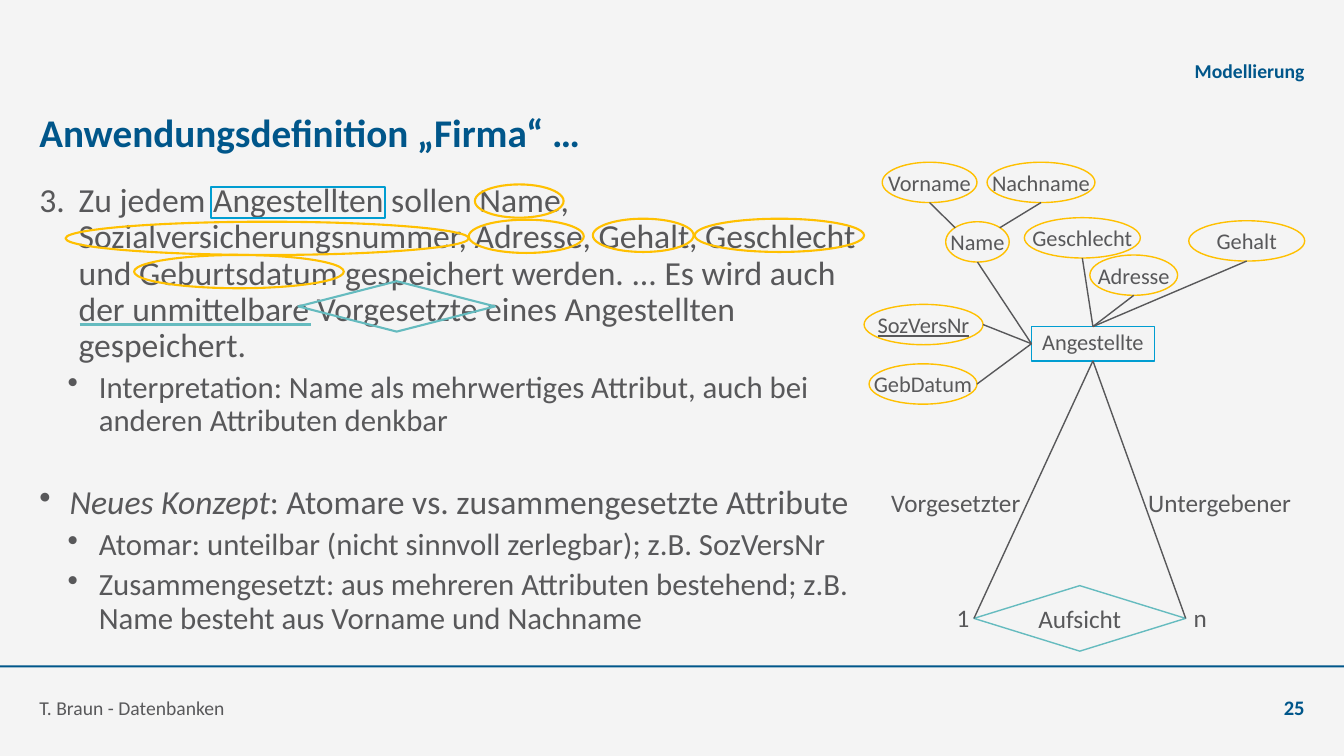
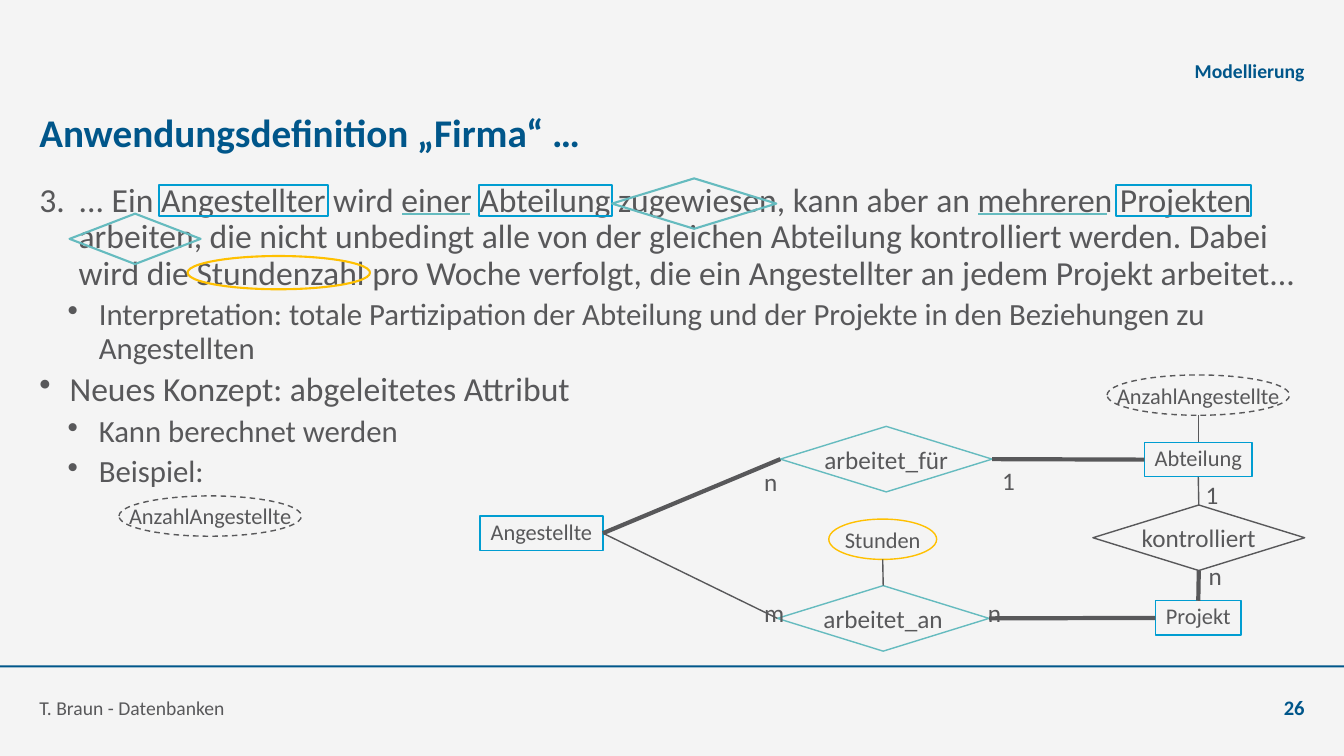
from typing import NamedTuple

from lxml import etree
from pptx import Presentation
from pptx.dml.color import RGBColor
from pptx.enum import dml, shapes, text
from pptx.oxml import ns
from pptx.util import Inches, Pt

PAPER = RGBColor(0xF4, 0xF4, 0xF4)
NAVY = RGBColor(0x00, 0x56, 0x8A)
GREY = RGBColor(0x58, 0x58, 0x5A)
BLUE = RGBColor(0x00, 0x9D, 0xD1)
GOLD = RGBColor(0xFF, 0xC0, 0x00)
TEAL = RGBColor(0x65, 0xBB, 0xBF)
FONT = "Calibri"
LEFT, CONTENT_WIDTH = 0.39, 12.55
RECT = shapes.MSO_SHAPE.RECTANGLE
OVAL = shapes.MSO_SHAPE.OVAL
DIAMOND = shapes.MSO_SHAPE.DIAMOND
ENTITY_HEIGHT, ATTRIBUTE_HEIGHT, MARK_HEIGHT = 0.34, 0.4, 0.33
RELATION_SIZE = (2.1, 0.65)
SIDES = {
    "top": (0.5, 0), "left": (0, 0.5), "bottom": (0.5, 1), "right": (1, 0.5),
    "upper left": (0.15, 0.15), "upper right": (0.85, 0.15),
}


class Level(NamedTuple):
    depth: int
    indent: float
    hanging: float
    size: int
    bullet: str
    bullet_values: dict


NUMBERED = Level(0, 0.39, 0.39, 24, "a:buAutoNum", {"type": "arabicPeriod", "startAt": "3"})
MAIN = Level(0, 0.3, 0.3, 24, "a:buChar", {"char": "•"})
SUB = Level(1, 0.59, 0.31, 22, "a:buChar", {"char": "•"})


class Item(NamedTuple):
    level: Level
    text: str
    italic_lead: str = ""
    gap: int = 5


def style(font, size, color=GREY, bold=None):
    font.name, font.size, font.bold = FONT, Pt(size), bold
    font.color.rgb = color


def add_box(page, left, top, width, height):
    box = page.shapes.add_textbox(Inches(left), Inches(top), Inches(width), Inches(height))
    frame = box.text_frame
    frame.word_wrap = True
    frame.margin_left = frame.margin_right = frame.margin_top = frame.margin_bottom = 0
    return frame


def add_line_of_text(page, place, content, size, color, bold=None, right=False, middle=False):
    frame = add_box(page, *place)
    frame.text = content
    frame.vertical_anchor = text.MSO_ANCHOR.MIDDLE if middle else text.MSO_ANCHOR.BOTTOM
    para = frame.paragraphs[0]
    para.alignment = text.PP_ALIGN.RIGHT if right else text.PP_ALIGN.LEFT
    style(para.runs[0].font, size, color, bold)


def add_page(deck, number):
    page = deck.slides.add_slide(deck.slide_layouts[6])
    page.background.fill.solid()
    page.background.fill.fore_color.rgb = PAPER
    rule = add_shape(page, RECT, (0, 6.6, 13.33, 0.02), None, fill=NAVY)
    rule.line.fill.background()
    add_line_of_text(page, (LEFT, 0.99, CONTENT_WIDTH, 0.63), "Anwendungsdefinition „Firma“ …",
                     28, NAVY, bold=True, middle=True)
    add_line_of_text(page, (3.93, 0.43, 9.01, 0.39), "Modellierung", 14, NAVY, bold=True, right=True)
    add_line_of_text(page, (LEFT, 6.75, 9.2, 0.39), "T. Braun - Datenbanken", 14, GREY)
    add_line_of_text(page, (12.15, 6.75, 0.79, 0.39), str(number), 14.7, NAVY, bold=True, right=True)
    return page


def add_body(page, width, items):
    frame = add_box(page, LEFT, 1.82, width, 4.64)
    for index, item in enumerate(items):
        para = frame.add_paragraph() if index else frame.paragraphs[0]
        level = item.level
        para.level = level.depth
        props = para._p.get_or_add_pPr()
        props.set("marL", str(Inches(level.indent)))
        props.set("indent", str(-Inches(level.hanging)))
        etree.SubElement(props, ns.qn(level.bullet), level.bullet_values)
        para.line_spacing = 0.9
        para.space_before = Pt(item.gap if index else 0)
        for content, italic in ((item.italic_lead, True), (item.text, None)):
            if content:
                span = para.add_run()
                span.text = content
                style(span.font, level.size)
                span.font.italic = italic


def add_shape(page, kind, place, color, weight=1, fill=None):
    shape = page.shapes.add_shape(kind, *map(Inches, place))
    shape.shadow.inherit = False
    if fill is None:
        shape.fill.background()
    else:
        shape.fill.solid()
        shape.fill.fore_color.rgb = fill
    if color is not None:
        shape.line.color.rgb = color
        shape.line.width = Pt(weight)
    return shape


def add_node(page, kind, place, label, color, size=16):
    node = add_shape(page, kind, place, color, fill=PAPER)
    frame = node.text_frame
    frame.text = label
    frame.word_wrap = False
    frame.vertical_anchor = text.MSO_ANCHOR.MIDDLE
    para = frame.paragraphs[0]
    para.alignment = text.PP_ALIGN.CENTER
    style(para.runs[0].font, size)
    return node


def add_entity(page, left, top, width, label):
    node = add_node(page, RECT, (left, top, width, ENTITY_HEIGHT), label, BLUE)
    node.text_frame.vertical_anchor = text.MSO_ANCHOR.TOP
    node.text_frame.paragraphs[0].line_spacing = 0.9
    return node


def add_attribute(page, left, top, width, label, key=False, derived=False):
    color = GREY if derived else GOLD
    node = add_node(page, OVAL, (left, top, width, ATTRIBUTE_HEIGHT), label, color)
    if key:
        node.text_frame.paragraphs[0].runs[0].font.underline = True
    if derived:
        node.line.dash_style = dml.MSO_LINE.DASH
    return node


def add_relation(page, left, top, label, color=TEAL):
    return add_node(page, DIAMOND, (left, top, *RELATION_SIZE), label, color, 18)


def add_line(page, start, end, color=GREY, weight=1):
    line = page.shapes.add_connector(shapes.MSO_CONNECTOR.STRAIGHT, *start, *end)
    line.line.color.rgb = color
    line.line.width = Pt(weight)
    etree.SubElement(line._element.spPr, ns.qn("a:effectLst"))


def anchor(node, side):
    across, down = SIDES[side]
    return int(node.left + across * node.width), int(node.top + down * node.height)


def link(page, first, first_side, second, second_side, weight=1):
    add_line(page, anchor(first, first_side), anchor(second, second_side), weight=weight)


def add_label(page, left, top, width, label):
    box = page.shapes.add_textbox(Inches(left), Inches(top), Inches(width), Inches(0.4))
    frame = box.text_frame
    frame.text = label
    frame.word_wrap = False
    frame.auto_size = text.MSO_AUTO_SIZE.SHAPE_TO_FIT_TEXT
    style(frame.paragraphs[0].runs[0].font, 18)


def mark_words(page, kind, color, height, places):
    for left, top, width in places:
        add_shape(page, kind, (left, top, width, height), color, 1.5)


def underline_words(page, height, spans):
    for start, end in spans:
        add_line(page, (Inches(start), Inches(height)), (Inches(end), Inches(height)), TEAL, 1.5)


def build_attributes_page(deck):
    page = add_page(deck, 25)
    add_body(page, 8.26, [
        Item(NUMBERED, "Zu jedem Angestellten sollen Name, Sozialversicherungsnummer, Adresse, Gehalt, "
             "Geschlecht und Geburtsdatum gespeichert werden. ... Es wird auch der unmittelbare "
             "Vorgesetzte eines Angestellten gespeichert."),
        Item(SUB, "Interpretation: Name als mehrwertiges Attribut, auch bei anderen Attributen denkbar"),
        Item(MAIN, ": Atomare vs. zusammengesetzte Attribute", "Neues Konzept", 34),
        Item(SUB, "Atomar: unteilbar (nicht sinnvoll zerlegbar); z.B. SozVersNr"),
        Item(SUB, "Zusammengesetzt: aus mehreren Attributen bestehend; z.B. Name besteht aus "
             "Vorname und Nachname"),
    ])
    mark_words(page, RECT, BLUE, 0.3, [(2.09, 1.86, 1.73)])
    mark_words(page, OVAL, GOLD, MARK_HEIGHT, [
        (4.71, 1.83, 0.88), (0.65, 2.2, 4), (4.65, 2.18, 1.14),
        (5.88, 2.17, 1), (6.89, 2.17, 1.68), (1.33, 2.53, 2.08),
    ])
    employee = add_entity(page, 10.23, 3.24, 1.22, "Angestellte")
    name = None
    for left, top, width, label, side, employee_side in (
        (8.57, 3.02, 1.18, "SozVersNr", "right", "left"),
        (8.62, 3.61, 1.07, "GebDatum", "right", "left"),
        (10.16, 2.16, 1.15, "Geschlecht", "bottom", "top"),
        (10.81, 2.53, 0.87, "Adresse", "bottom", "top"),
        (11.79, 2.19, 1.15, "Gehalt", "bottom", "top"),
        (9.38, 2.2, 0.63, "Name", "bottom", "left"),
    ):
        name = add_attribute(page, left, top, width, label, key=label == "SozVersNr")
        link(page, employee, employee_side, name, side)
    first_name = add_attribute(page, 8.75, 1.61, 0.94, "Vorname")
    last_name = add_attribute(page, 9.79, 1.61, 1.07, "Nachname")
    link(page, name, "upper left", first_name, "bottom")
    link(page, name, "upper right", last_name, "bottom")
    supervision = add_relation(page, 9.66, 5.81, "Aufsicht")
    for side in ("right", "left"):
        link(page, supervision, side, employee, "bottom")
    for label in ((8.74, 4.79, 1.5, "Vorgesetzter"), (11.29, 4.79, 1.64, "Untergebener"),
                  (9.39, 5.93, 0.33, "1"), (11.74, 5.93, 0.34, "n")):
        add_label(page, *label)
    mark_words(page, DIAMOND, TEAL, 0.5, [(2.96, 2.79, 1.95)])
    underline_words(page, 3.22, [(0.79, 3.08)])


def build_relations_page(deck):
    page = add_page(deck, 26)
    add_body(page, CONTENT_WIDTH, [
        Item(NUMBERED, "... Ein Angestellter wird einer Abteilung zugewiesen, kann aber an mehreren "
             "Projekten arbeiten, die nicht unbedingt alle von der gleichen Abteilung kontrolliert "
             "werden. Dabei wird die Stundenzahl pro Woche verfolgt, die ein Angestellter an jedem "
             "Projekt arbeitet..."),
        Item(SUB, "Interpretation: totale Partizipation der Abteilung und der Projekte in den "
             "Beziehungen zu Angestellten"),
        Item(MAIN, "Neues Konzept: abgeleitetes Attribut"),
        Item(SUB, "Kann berechnet werden"),
        Item(SUB, "Beispiel:"),
    ])
    mark_words(page, RECT, BLUE, 0.3, [(1.58, 1.84, 1.67), (4.75, 1.84, 1.32), (11.07, 1.84, 1.34)])
    mark_words(page, OVAL, GOLD, MARK_HEIGHT, [(1.86, 2.54, 1.81)])
    department = add_entity(page, 11.35, 4.39, 1.07, "Abteilung")
    employee = add_entity(page, 4.76, 5.12, 1.22, "Angestellte")
    project = add_entity(page, 11.46, 5.96, 0.85, "Projekt")
    head_count = add_attribute(page, 10.98, 3.72, 1.81, "AnzahlAngestellte", derived=True)
    add_attribute(page, 1.18, 4.92, 1.81, "AnzahlAngestellte", derived=True)
    hours = add_attribute(page, 8.22, 5.15, 1.07, "Stunden")
    works_for = add_relation(page, 7.74, 4.23, "arbeitet_für")
    controls = add_relation(page, 10.84, 5.01, "kontrolliert", GREY)
    works_on = add_relation(page, 7.71, 5.81, "arbeitet_an")
    for first, first_side, second, second_side, weight in (
        (head_count, "bottom", department, "top", 1),
        (works_for, "right", department, "left", 3),
        (employee, "right", works_for, "left", 3),
        (controls, "top", department, "bottom", 1),
        (project, "top", controls, "bottom", 3),
        (works_on, "right", project, "left", 3),
        (employee, "right", works_on, "left", 1),
        (works_on, "top", hours, "bottom", 1),
    ):
        link(page, first, first_side, second, second_side, weight)
    for label in ((7.48, 4.58, 0.34, "n"), (9.84, 4.57, 0.33, "1"), (11.86, 4.71, 0.33, "1"),
                  (11.89, 5.51, 0.34, "n"), (7.48, 5.88, 0.42, "m"), (9.7, 5.88, 0.34, "n")):
        add_label(page, *label)
    mark_words(page, DIAMOND, TEAL, 0.5, [(6.07, 1.77, 1.63), (0.69, 2.12, 1.3)])
    underline_words(page, 2.12, [(3.99, 4.66), (9.7, 10.98)])


def main():
    """Build both slides on entity-relationship modelling and save the deck."""
    deck = Presentation()
    deck.slide_width, deck.slide_height = Inches(13.33), Inches(7.5)
    build_attributes_page(deck)
    build_relations_page(deck)
    deck.save("out.pptx")


if __name__ == "__main__":
    main()
